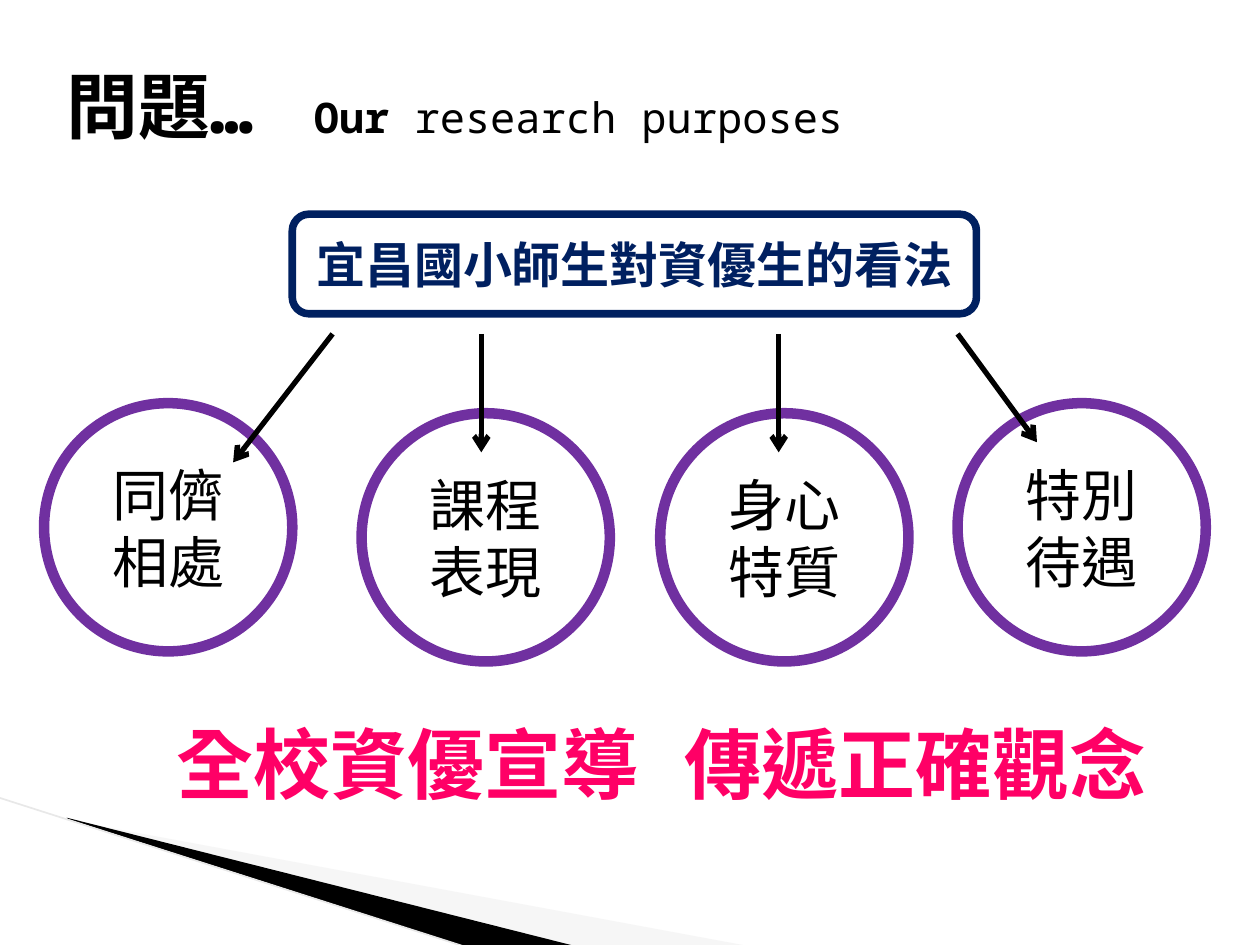
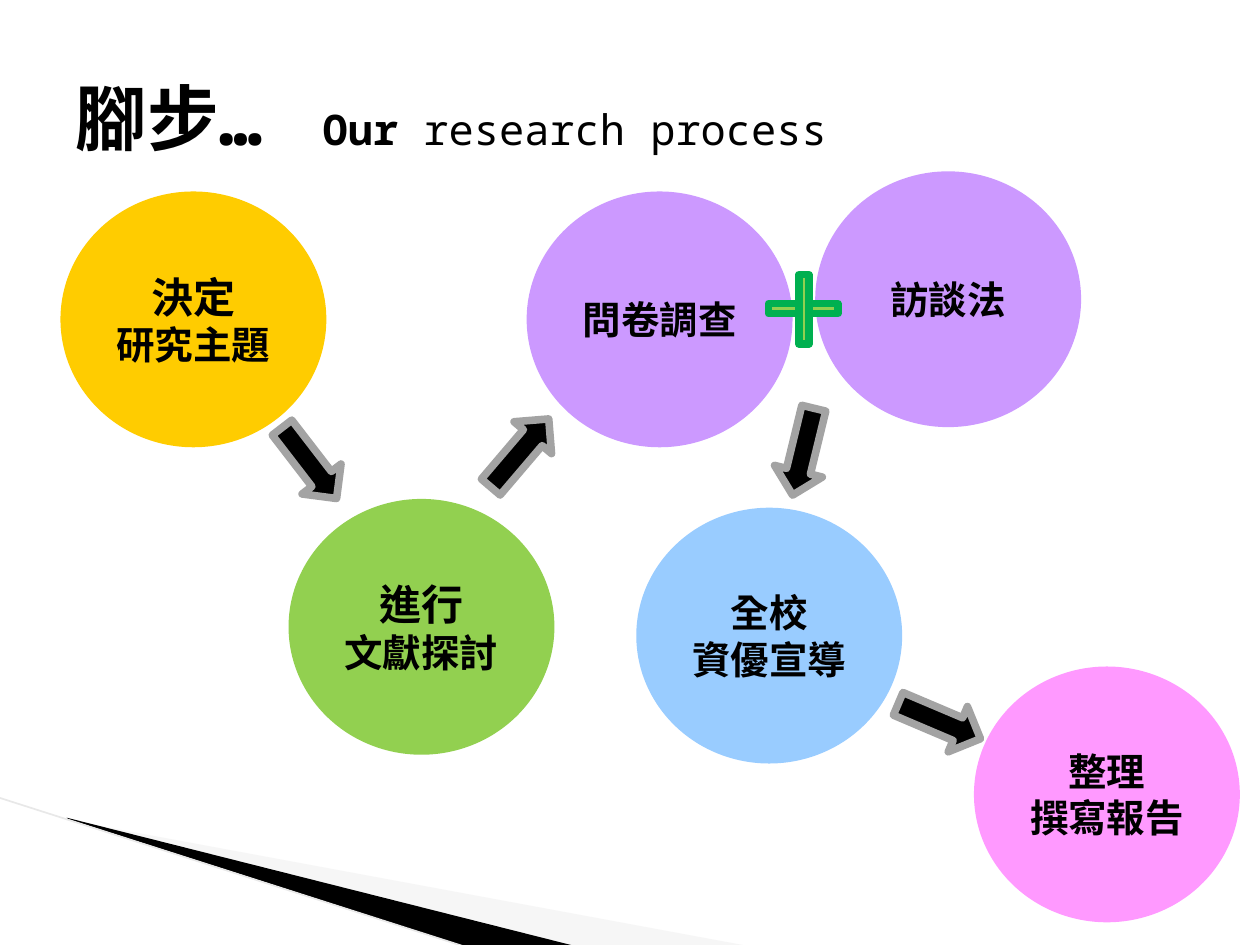
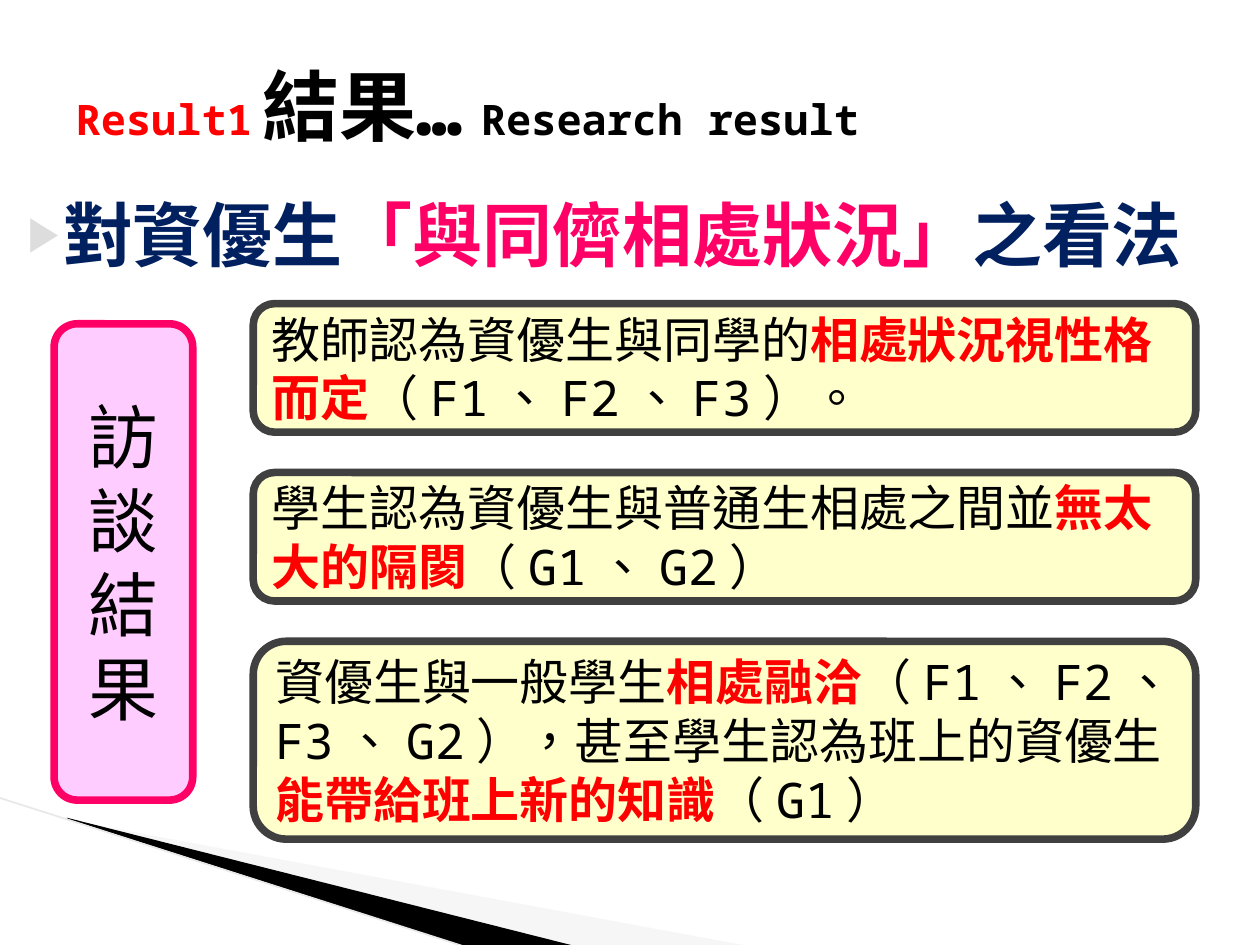
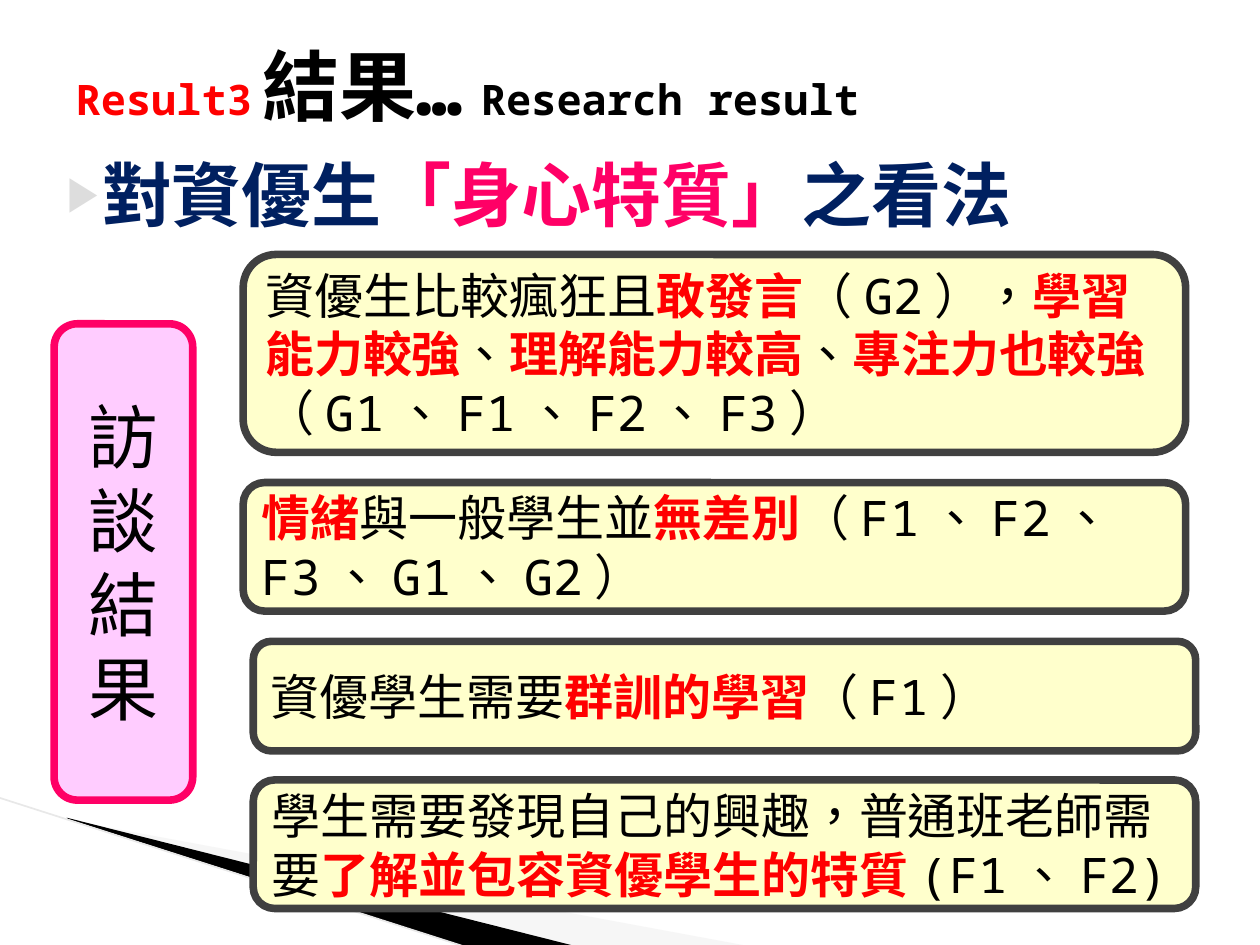
"""Build four slides on a school study of gifted pupils: purposes, process and two results."""
from lxml import etree
from pptx import Presentation
from pptx.dml.color import RGBColor
from pptx.enum.shapes import MSO_CONNECTOR, MSO_SHAPE
from pptx.enum.text import MSO_ANCHOR, MSO_AUTO_SIZE, PP_ALIGN
from pptx.oxml.ns import qn
from pptx.util import Inches, Pt

FONT = "Noto Sans Mono"
LANGUAGE = "zh-TW"
BORDER = 4.33
COLORS = {
    "black": "000000", "navy": "002060", "purple": "7030A0", "pink": "FF0066",
    "red": "FF0000", "light_pink": "FFCCFF", "cream": "FFFFCC", "charcoal": "404040",
    "gray": "A3A3A3", "pale": "EAEAEA", "rule": "E8E8E8", "bullet": "DDDDDD",
    "gold": "FFCC00", "green": "92D050", "dark_green": "00B050",
    "blue": "99CCFF", "rose": "FF99FF", "lilac": "CC99FF",
}

BANDS = [
    ([(0.55, 6.51), (5.95, 7.51), (4.56, 7.51), (0.55, 6.5)], "pale", 40),
    ([(0.53, 6.49), (4.57, 7.51), (3.72, 7.52), (0.54, 6.5)], "black", 100),
]
BAND_RULE = ((-0.01, 6.33), (3.71, 7.52))

TOPIC = "宜昌國小師生對資優生的看法"
SLOGAN = "全校資優宣導 傳遞正確觀念"
QUESTIONS = [
    ("同儕相處", (0.35, 3.2), (2.64, 2.65), (1.85, 3.67)),
    ("課程表現", (2.87, 3.28), (3.82, 2.65), (3.82, 3.59)),
    ("身心特質", (5.24, 3.28), (6.18, 2.65), (6.18, 3.59)),
    ("特別待遇", (7.6, 3.2), (7.6, 2.65), (8.23, 3.51)),
]

STEPS = [
    ([("決定", 24), ("研究主題", 22)], "gold", (0.51, 1.55)),
    ([("進行", 24), ("文獻探討", 22)], "green", (2.32, 3.99)),
    ([("全校", 22), ("資優宣導", 22)], "blue", (5.08, 4.06)),
    ([("整理", 22), ("撰寫報告", 22)], "rose", (7.76, 5.32)),
    ([("問卷調查", 22)], "lilac", (4.21, 1.55)),
    ([("訪談法", 22)], "lilac", (6.5, 1.39)),
]
STEP_ARROWS = [(2.1, 3.48, 52.4), (6.02, 3.39, 103.7), (7.1, 5.53, 23), (3.77, 3.4, 310.4)]
PLUS_BARS = [(6.1, 2.41, 0.55, 0.08), (6.34, 2.18, 0.08, 0.55)]

INTERVIEW_LABEL = "訪談結果"
RESULTS = [
    {
        "number": "Result1", "title_top": 0.21,
        "heading": "對資優生*「與同儕相處狀況」*之看法", "heading_box": (0, 1.47, 10, 0.71),
        "findings": [
            ("教師認為資優生與同學的*相處狀況視性格而定*（F1、F2、F3）。", 2.01, 2.41, 1.02),
            ("學生認為資優生與普通生相處之間並*無太大的隔閡*（G1、G2）", 2.01, 3.75, 1.02),
            ("資優生與一般學生*相處融洽*（F1、F2、F3、G2），甚至學生認為班上的資優生"
             "*能帶給班上新的知識*（G1）", 2.01, 5.09, 1.57),
        ],
    },
    {
        "number": "Result3", "title_top": 0.05,
        "heading": "對資優生*「身心特質」*之看法", "heading_box": (0.31, 1.15, 9.49, 0.71),
        "findings": [
            ("資優生比較瘋狂且*敢發言*（G2），*學習能力較強*、*理解能力較高*、*專注力也較強*"
             "（G1、F1、F2、F3）", 1.93, 2.02, 1.57),
            ("*情緒*與一般學生並*無差別*（F1、F2、F3、G1、G2）", 1.93, 3.83, 1.02),
            ("資優學生需要*群訓的學習*（F1）", 2.01, 5.09, 0.87),
            ("學生需要發現自己的興趣，普通班老師需要*了解並包容資優學生的特質*(F1、F2)",
             2.01, 6.19, 1.02),
        ],
    },
]


def color(name):
    return RGBColor.from_string(COLORS[name])


def marked(text, plain, strong):
    """Split text at asterisks and give the parts the two styles in turn."""
    return [(part, *(strong if index % 2 else plain))
            for index, part in enumerate(text.split("*")) if part]


def write(text_frame, lines, align=PP_ALIGN.LEFT):
    """Fill the frame with lines, each a list of (text, size, color, bold) runs."""
    text_frame.word_wrap = True
    for index, runs in enumerate(lines):
        paragraph = text_frame.add_paragraph() if index else text_frame.paragraphs[0]
        paragraph.alignment = align
        paragraph.space_before = Pt(0)
        for text, size, color_name, bold in runs:
            run = paragraph.add_run()
            run.text = text
            run.font.size = Pt(size)
            run.font.bold = bold
            run.font.color.rgb = color(color_name)
            run.font.name = FONT
            run.font._element.set("lang", LANGUAGE)
            etree.SubElement(run.font._element, qn("a:ea"), typeface=FONT)


def place(shape, box):
    shape.left, shape.top, shape.width, shape.height = map(Inches, box)


def add_shape(slide, kind, box, fill=None, line=None, width=BORDER):
    shape = slide.shapes.add_shape(kind, *map(Inches, box))
    shape.shadow.inherit = False
    if fill:
        shape.fill.solid()
        shape.fill.fore_color.rgb = color(fill)
    else:
        shape.fill.background()
    shape.line.color.rgb = color(line)
    shape.line.width = Pt(width)
    shape.text_frame.vertical_anchor = MSO_ANCHOR.MIDDLE
    return shape


def add_line(slide, start, end, color_name, width, arrow=False):
    connector = slide.shapes.add_connector(
        MSO_CONNECTOR.STRAIGHT, *map(Inches, (*start, *end)))
    connector.line.color.rgb = color(color_name)
    connector.line.width = Pt(width)
    if arrow:
        etree.SubElement(connector.line._get_or_add_ln(), qn("a:tailEnd"), type="arrow")
    etree.SubElement(connector._element.spPr, qn("a:effectLst"))
    return connector


def add_bands_to_master(presentation, slide):
    """Draw the corner bands and move them to the master, behind everything."""
    parts = []
    for points, color_name, opacity in BANDS:
        corners = [(Inches(x), Inches(y)) for x, y in points]
        builder = slide.shapes.build_freeform(*corners[0])
        builder.add_line_segments(corners[1:])
        band = builder.convert_to_shape()
        band.shadow.inherit = False
        band.fill.solid()
        band.fill.fore_color.rgb = color(color_name)
        band.line.fill.background()
        if opacity < 100:
            tint = band._element.spPr.find(".//" + qn("a:srgbClr"))
            etree.SubElement(tint, qn("a:alpha"), val=str(opacity * 1000))
        parts.append(band)
    parts.append(add_line(slide, *BAND_RULE, "rule", 0.95))
    tree = presentation.slide_master.shapes._spTree
    for index, part in enumerate(parts):
        tree.insert(2 + index, part._element)


def add_title(slide, left, top, runs):
    title = slide.shapes.title
    place(title, (left, top, 9, 1.25))
    title.text_frame.auto_size = MSO_AUTO_SIZE.NONE
    title.text_frame.vertical_anchor = MSO_ANCHOR.MIDDLE
    write(title.text_frame, [runs])


def add_topic_title(slide, left, top, topic, subject):
    add_title(slide, left, top, [(topic + "… ", 41, "black", True),
                                 ("Our ", 24, "black", True),
                                 (subject, 24, "black", False)])


def add_heading(slide, text, box):
    body = slide.placeholders[1]
    place(body, box)
    body.text_frame.auto_size = MSO_AUTO_SIZE.NONE
    properties = body.text_frame.paragraphs[0]._p.get_or_add_pPr()
    properties.set("marL", str(Inches(0.4)))
    properties.set("indent", str(Inches(-0.28)))
    bullet_color = etree.SubElement(properties, qn("a:buClr"))
    etree.SubElement(bullet_color, qn("a:srgbClr"), val=COLORS["bullet"])
    etree.SubElement(properties, qn("a:buSzPct"), val="68000")
    etree.SubElement(properties, qn("a:buChar"), char="▶")
    write(body.text_frame, [marked(text, (40, "navy", True), (40, "pink", True))])


def build_purposes(slide):
    add_topic_title(slide, 0.43, 0.21, "問題", "research purposes")
    topic = add_shape(slide, MSO_SHAPE.ROUNDED_RECTANGLE, (2.32, 1.7, 5.43, 0.79), line="navy")
    write(topic.text_frame, [[(TOPIC, 28, "navy", True)]], PP_ALIGN.CENTER)
    for text, corner, start, end in QUESTIONS:
        circle = add_shape(slide, MSO_SHAPE.OVAL, (*corner, 1.97, 1.97), line="purple", width=6)
        write(circle.text_frame, [[(text, 32, "black", False)]], PP_ALIGN.CENTER)
        add_line(slide, start, end, "black", 3, arrow=True)
    slogan = slide.shapes.add_textbox(*map(Inches, (1.3, 5.64, 7.87, 0.84)))
    slogan.text_frame.margin_right = 0
    write(slogan.text_frame, [[(SLOGAN, 44, "pink", True)]])


def build_process(slide):
    add_topic_title(slide, 0.5, 0.3, "腳步", "research process")
    for left, top, rotation in STEP_ARROWS:
        arrow = add_shape(slide, MSO_SHAPE.RIGHT_ARROW, (left, top, 0.71, 0.39), "black", "gray")
        arrow.rotation = rotation
    for lines, fill, corner in STEPS:
        circle = add_shape(slide, MSO_SHAPE.OVAL, (*corner, 2.05, 1.97), fill, fill)
        write(circle.text_frame, [[(text, size, "black", True)] for text, size in lines],
              PP_ALIGN.CENTER)
    for box in PLUS_BARS:
        add_shape(slide, MSO_SHAPE.RECTANGLE, box, "green", "dark_green")


def build_result(slide, result):
    add_heading(slide, result["heading"], result["heading_box"])
    add_title(slide, 0.5, result["title_top"], [(result["number"], 24, "red", True),
                                                ("結果…", 44, "black", True),
                                                ("Research result", 24, "black", True)])
    label = add_shape(slide, MSO_SHAPE.ROUNDED_RECTANGLE, (0.43, 2.57, 1.1, 3.78),
                      "light_pink", "pink")
    write(label.text_frame, [[(INTERVIEW_LABEL, 40, "black", False)]], PP_ALIGN.CENTER)
    for text, left, top, height in result["findings"]:
        box = add_shape(slide, MSO_SHAPE.ROUNDED_RECTANGLE, (left, top, 7.48, height),
                        "cream", "charcoal")
        write(box.text_frame, [marked(text, (28, "black", False), (28, "red", True))])


def main():
    presentation = Presentation()
    presentation.slide_width, presentation.slide_height = Inches(10), Inches(7.5)
    content_layout, title_layout = presentation.slide_layouts[1], presentation.slide_layouts[5]
    purposes = presentation.slides.add_slide(title_layout)
    add_bands_to_master(presentation, purposes)
    build_purposes(purposes)
    build_process(presentation.slides.add_slide(title_layout))
    for result in RESULTS:
        build_result(presentation.slides.add_slide(content_layout), result)
    presentation.save("out.pptx")


if __name__ == "__main__":
    main()
